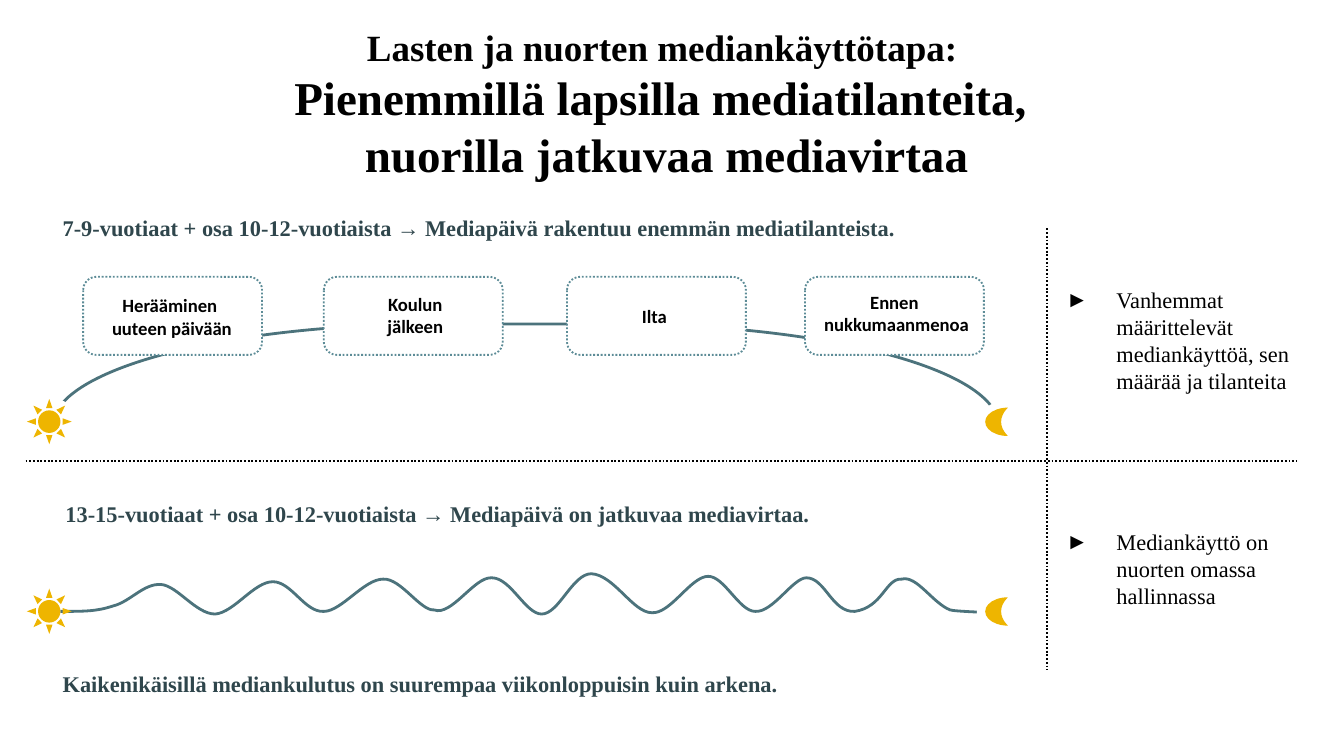
from itertools import zip_longest

from lxml import etree
from pptx import Presentation
from pptx.dml.color import RGBColor
from pptx.enum import dml, shapes, text
from pptx.oxml import ns
from pptx.util import Pt

COLORS = {"ink": "000000", "heading": "2F464C", "curve": "4C737C",
          "frame": "5D8C97", "sky": "EEB500", "paper": "FFFFFF"}
SERIF = "Times New Roman"
SHAPE = shapes.MSO_SHAPE

WAVE_START = (0, 20.2)
WAVE_CURVES = [
    ((13, 20.2), (19.4, 20.2), (28.1, 17.3)),
    ((37.4, 15.1), (44.6, 5), (54, 5.8)),
    ((62.6, 6.5), (72.7, 21.6), (82.8, 21.6)),
    ((92.9, 20.9), (103.7, 4.3), (113.8, 4.3)),
    ((123.8, 4.3), (131, 20.9), (141.1, 20.2)),
    ((150.5, 20.2), (162.7, 2.9), (172.8, 2.9)),
    ((182.2, 2.2), (193, 20.2), (200.2, 19.4)),
    ((209.5, 23), (221.8, 1.4), (231.1, 2.2)),
    ((241.2, 2.2), (249.1, 21.6), (257.8, 21.6)),
    ((267.1, 21.6), (274.3, 0), (284.4, 0)),
    ((296.6, 0.7), (306.7, 20.9), (316.8, 20.9)),
    ((326.9, 21.6), (337.7, 1.4), (347, 1.4)),
    ((355.7, 1.4), (363.6, 20.2), (372.2, 20.2)),
    ((381.6, 20.9), (392.4, 2.2), (399.6, 2.2)),
    ((409.7, 2.2), (413.3, 20.9), (425.5, 20.2)),
    ((440.6, 18), (442.1, 2.2), (450.7, 2.9)),
    ((458.6, 0.7), (467.3, 15.8), (476.6, 19.4)),
    ((478.8, 20.2), (499, 20.9), (502.6, 20.9)),
]


def color(name):
    """Return the named colour."""
    return RGBColor.from_string(COLORS[name])


def style_line(line, name, width, dotted=False):
    """Set the colour, width and dash of a line."""
    line.color.rgb = color(name)
    line.width = Pt(width)
    if dotted:
        line.dash_style = dml.MSO_LINE.ROUND_DOT


def write(shape, content, sizes=(12,), font=SERIF, ink="ink", bold=True,
          align=text.PP_ALIGN.LEFT, anchor=text.MSO_ANCHOR.MIDDLE,
          margins=(0, 0), bullet=None):
    """Write one paragraph, with a size for each of its lines."""
    frame = shape.text_frame
    frame.word_wrap = True
    frame.auto_size = text.MSO_AUTO_SIZE.NONE
    frame.vertical_anchor = anchor
    frame.margin_left = frame.margin_right = Pt(margins[0])
    frame.margin_top = frame.margin_bottom = Pt(margins[1])
    para = frame.paragraphs[0]
    para.alignment = align
    if bullet:
        props = para._p.get_or_add_pPr()
        props.set("marL", str(Pt(27)))
        props.set("indent", str(-Pt(27)))
        etree.SubElement(props, ns.qn("a:buFont")).set("typeface", font)
        etree.SubElement(props, ns.qn("a:buChar")).set("char", bullet)
    lines = content.split("\n")
    for number, (words, size) in enumerate(zip_longest(lines, sizes, fillvalue=sizes[-1])):
        if number:
            para.add_line_break()
        span = para.add_run()
        span.text = words
        span.font.size = Pt(size)
        span.font.name = font
        span.font.bold = bold
        span.font.color.rgb = color(ink)


def add_block(page, kind, box, fill=None, rotation=0):
    """Add a plain preset shape without outline."""
    block = page.shapes.add_shape(kind, *map(Pt, box))
    block.shadow.inherit = False
    block.rotation = rotation
    if fill:
        block.fill.solid()
        block.fill.fore_color.rgb = color(fill)
    else:
        block.fill.background()
    block.line.fill.background()
    return block


def add_divider(page, start, end):
    """Add a dotted dividing line."""
    line = page.shapes.add_connector(
        shapes.MSO_CONNECTOR.STRAIGHT, *map(Pt, (*start, *end)))
    etree.SubElement(line._element.spPr, ns.qn("a:effectLst"))
    style_line(line.line, "ink", 1, dotted=True)


def add_title(page, box):
    """Place and fill the title."""
    title = page.shapes.title
    title.left, title.top, title.width, title.height = map(Pt, box)
    write(title, "Lasten ja nuorten mediankäyttötapa: \n"
          "Pienemmillä lapsilla mediatilanteita, \nnuorilla jatkuvaa mediavirtaa",
          sizes=(19.8, 25.2), align=text.PP_ALIGN.CENTER, margins=(7.2, 3.6))


def add_caption(page, box, content):
    """Add a bold heading line."""
    write(add_block(page, SHAPE.ROUNDED_RECTANGLE, box), content, ink="heading")


def add_note(page, box, content):
    """Add a bulleted remark."""
    write(page.shapes.add_textbox(*map(Pt, box)), content, bold=False,
          anchor=text.MSO_ANCHOR.TOP, margins=(7.2, 3.6), bullet="►")


def add_sun_and_moon(page, box):
    """Add a sun at the left end of the box and a moon at its right end."""
    left, top, width, height = box
    add_block(page, SHAPE.SUN, (left, top, 24, height), "sky")
    moon = add_block(page, SHAPE.MOON, (left + width - 12.2, top + 4.6, 12.2, 15.2), "sky")
    moon.adjustments[0] = 0.7


def add_arc(page, box):
    """Add the day arc, with its two ends trimmed."""
    left, top, width, height = box
    arc = add_block(page, SHAPE.LEFT_BRACKET,
                    (left + (width - height) / 2, top + (height - width) / 2, height, width),
                    rotation=90)
    arc.adjustments[0] = 3.77
    style_line(arc.line, "curve", 1.5)
    add_block(page, SHAPE.RECTANGLE, (left + width - 18.7, top + 42.5, 37.4, 23), "paper", 330.7)
    add_block(page, SHAPE.RECTANGLE, (left - 15.1, top + 40.3, 31.7, 26.6), "paper", 27.7)


def add_situation(page, box, label, shift):
    """Add a dotted card and its label, shifted a little from the card."""
    left, top, width, height = box
    card = add_block(page, SHAPE.ROUNDED_RECTANGLE, box, "paper")
    style_line(card.line, "frame", 1, dotted=True)
    tag = add_block(page, SHAPE.ROUND_2_DIAG_RECTANGLE,
                    (left + shift[0], top + shift[1], 100.8, height))
    write(tag, label, sizes=(10,), font="Calibri", align=text.PP_ALIGN.CENTER)


def add_wave(page, box):
    """Draw the continuous wave as Bézier curves, with its end trimmed."""
    left, top, width, height = box
    builder = page.shapes.build_freeform(Pt(left + WAVE_START[0]), Pt(top + WAVE_START[1]))
    builder.add_line_segments(
        [(Pt(left + x), Pt(top + y)) for *_, (x, y) in WAVE_CURVES], close=False)
    wave = builder.convert_to_shape()
    wave.shadow.inherit = False
    wave.fill.background()
    style_line(wave.line, "curve", 1.5)
    segments = list(wave._element.iter(ns.qn("a:lnTo")))
    for segment, curve in zip(segments, WAVE_CURVES):
        bend = etree.Element(ns.qn("a:cubicBezTo"))
        for x, y in curve:
            point = etree.SubElement(bend, ns.qn("a:pt"))
            point.set("x", str(Pt(left + x) - wave.left))
            point.set("y", str(Pt(top + y) - wave.top))
        segment.getparent().replace(segment, bend)
    add_block(page, SHAPE.RECTANGLE,
              (left + width - 18.8, top + 8.7, 37.4, 23), "paper", 270)


def add_children(page, box):
    """Build the upper band: separate media situations."""
    left, top, width, height = box
    add_arc(page, (left + 14.1, top + 63.4, 506.9, 54.7))
    situations = [("Herääminen \nuuteen päivään", 30.6, (-2.9, 0.4)),
                  ("Koulun\njälkeen", 159.5, (-1.4, -0.5)),
                  ("Ilta", 289.8, (-3.6, 0)),
                  ("Ennen \nnukkumaanmenoa", 417.3, (-1.4, -1.4))]
    for label, offset, shift in situations:
        add_situation(page, (left + offset, top + 38.1, 95.8, 41.8), label, shift)
    add_caption(page, (left + 18.4, top, 510.5, 23.8),
                "7-9-vuotiaat + osa 10-12-vuotiaista → Mediapäivä rakentuu enemmän mediatilanteista.")
    add_sun_and_moon(page, (left + 0.4, top + 103.6, 525.6, 24.2))
    add_note(page, (left + width - 131, top + 39.6, 145.4, 67),
             "Vanhemmat määrittelevät mediankäyttöä, sen määrää ja tilanteita")


def add_teens(page, box):
    """Build the lower band: one continuous media flow."""
    left, top, width, height = box
    add_wave(page, (left + 18.4, top + 45.4, 502.6, 21.6))
    add_caption(page, (left + 19.8, top, 496.1, 26.6),
                "13-15-vuotiaat + osa 10-12-vuotiaista → Mediapäivä on jatkuvaa mediavirtaa.")
    add_sun_and_moon(page, (left + 0.4, top + 53.4, 525.6, 24.2))
    add_note(page, (left + width - 131, top + 17.4, 145.4, 67),
             "Mediankäyttö on nuorten omassa hallinnassa")
    add_caption(page, (left + 18.4, top + 92.2, 510.5, 23.8),
                "Kaikenikäisillä mediankulutus on suurempaa viikonloppuisin kuin arkena.")


def main():
    """Build and save the deck."""
    deck = Presentation()
    deck.slide_width, deck.slide_height = Pt(720), Pt(405)
    page = deck.slides.add_slide(deck.slide_layouts[5])
    add_title(page, (20.2, 13, 673.9, 84.2))
    add_teens(page, (14, 262, 681, 116))
    add_children(page, (14, 110.2, 681, 136.8))
    add_divider(page, (13.7, 247), (694.8, 247))
    add_divider(page, (560.7, 122.4), (560.7, 358.6))
    deck.save("out.pptx")


if __name__ == "__main__":
    main()
